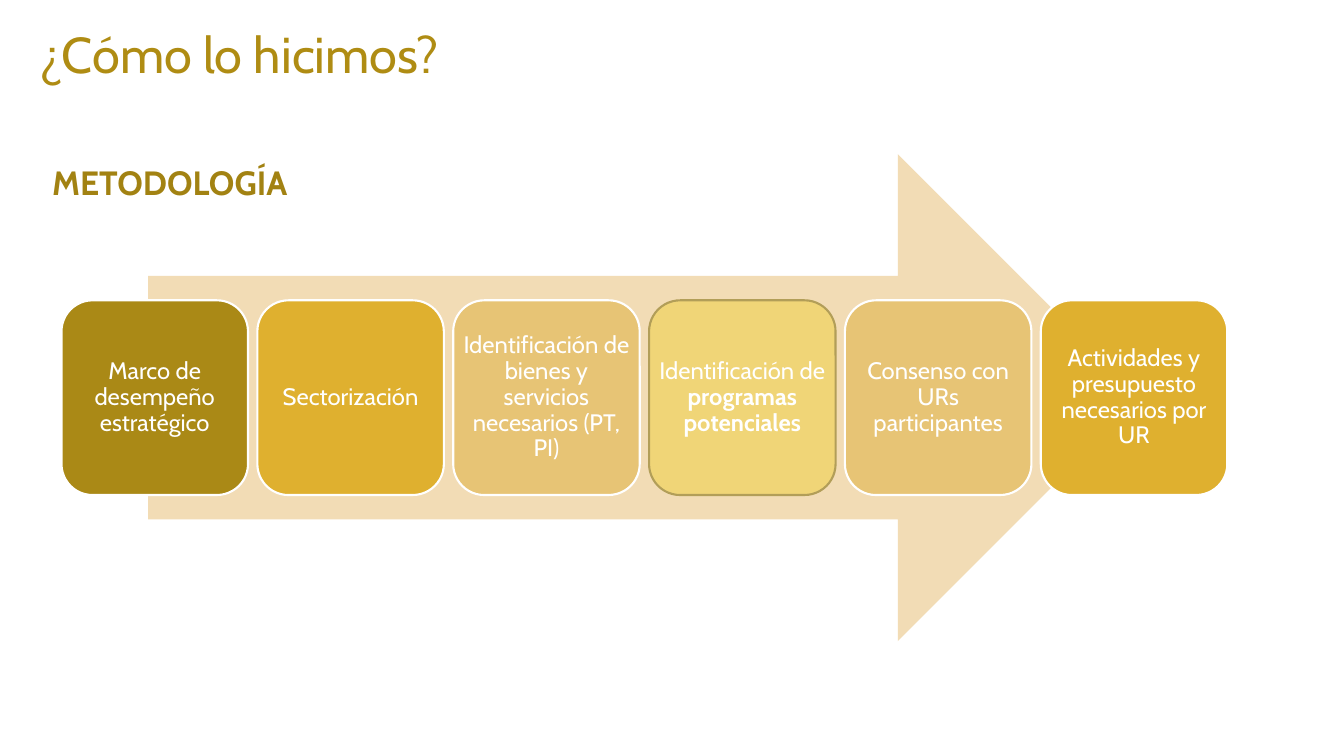
from pptx import Presentation
from pptx.dml.color import RGBColor
from pptx.enum import shapes, text
from pptx.util import Inches, Pt

WIDTH, HEIGHT = 13.33, 7.5
FONT = "Cabin"
TITLE = "¿Cómo lo hicimos?"
SUBTITLE = "METODOLOGÍA"

# Each step: (plain text, bold text), fill, outline
STEPS = [
    (("Marco de desempeño estratégico", ""), "AA8916", "FFFFFF"),
    (("Sectorización", ""), "DFB02F", "FFFFFF"),
    (("Identificación de bienes y servicios necesarios (PT, PI)", ""), "E7C475", "FFFFFF"),
    (("Identificación de ", "programas potenciales"), "F0D577", "B29E58"),
    (("Consenso con URs participantes", ""), "E7C475", "FFFFFF"),
    (("Actividades y presupuesto necesarios por UR", ""), "DFB02F", "FFFFFF"),
]

# Process grid: the steps are centred on the arrow's axis
ARROW_LEFT, ARROW_TOP, ARROW_WIDTH, ARROW_HEIGHT = 1.47, 1.53, 9.85, 4.83
STEP_LEFT, STEP_WIDTH, STEP_HEIGHT = 0.61, 1.85, 0.4 * ARROW_HEIGHT
STEP_PITCH = 1.05 * STEP_WIDTH
STEP_TOP = ARROW_TOP + (ARROW_HEIGHT - STEP_HEIGHT) / 2


def color(value):
    return RGBColor.from_string(value)


def write(shape, plain, bold="", size=17, fill="FFFFFF", align=text.PP_ALIGN.LEFT,
          anchor=text.MSO_ANCHOR.TOP, inset=None, spacing=None):
    frame = shape.text_frame
    frame.word_wrap = True
    frame.auto_size = text.MSO_AUTO_SIZE.NONE
    frame.vertical_anchor = anchor
    if inset is not None:
        frame.margin_left = frame.margin_right = Inches(inset)
        frame.margin_top = frame.margin_bottom = Inches(inset)
    paragraph = frame.paragraphs[0]
    paragraph.alignment = align
    paragraph.line_spacing = spacing
    for words, is_bold in ((plain, False), (bold, True)):
        if words:
            run = paragraph.add_run()
            run.text = words
            run.font.name = FONT
            run.font.size = Pt(size)
            run.font.bold = is_bold
            run.font.color.rgb = color(fill)


def add_block(slide, kind, left, top, width, height, fill, line=None):
    shape = slide.shapes.add_shape(
        kind, Inches(left), Inches(top), Inches(width), Inches(height))
    shape.shadow.inherit = False
    shape.fill.solid()
    shape.fill.fore_color.rgb = color(fill)
    if line:
        shape.line.color.rgb = color(line)
        shape.line.width = Pt(1.5)
    else:
        shape.line.fill.background()
    return shape


def main():
    presentation = Presentation()
    presentation.slide_width = Inches(WIDTH)
    presentation.slide_height = Inches(HEIGHT)
    slide = presentation.slides.add_slide(presentation.slide_layouts[5])

    # Title
    title = slide.shapes.title
    title.left, title.top = Inches(0.29), Inches(0.25)
    title.width, title.height = Inches(9.4), Inches(1.44)
    write(title, TITLE, size=36, fill="AF8C13", spacing=0.9)

    # Background arrow
    add_block(slide, shapes.MSO_SHAPE.RIGHT_ARROW,
              ARROW_LEFT, ARROW_TOP, ARROW_WIDTH, ARROW_HEIGHT, "F2DCB5")

    # Steps
    for index, (words, fill, line) in enumerate(STEPS):
        step = add_block(slide, shapes.MSO_SHAPE.ROUNDED_RECTANGLE,
                         STEP_LEFT + index * STEP_PITCH, STEP_TOP,
                         STEP_WIDTH, STEP_HEIGHT, fill, line)
        write(step, *words, align=text.PP_ALIGN.CENTER,
              anchor=text.MSO_ANCHOR.MIDDLE, inset=0, spacing=0.9)

    # Subtitle
    subtitle = slide.shapes.add_textbox(
        Inches(0.42), Inches(1.56), Inches(4.83), Inches(0.5))
    write(subtitle, "", SUBTITLE, size=24, fill="A28212")

    presentation.save("out.pptx")


if __name__ == "__main__":
    main()
